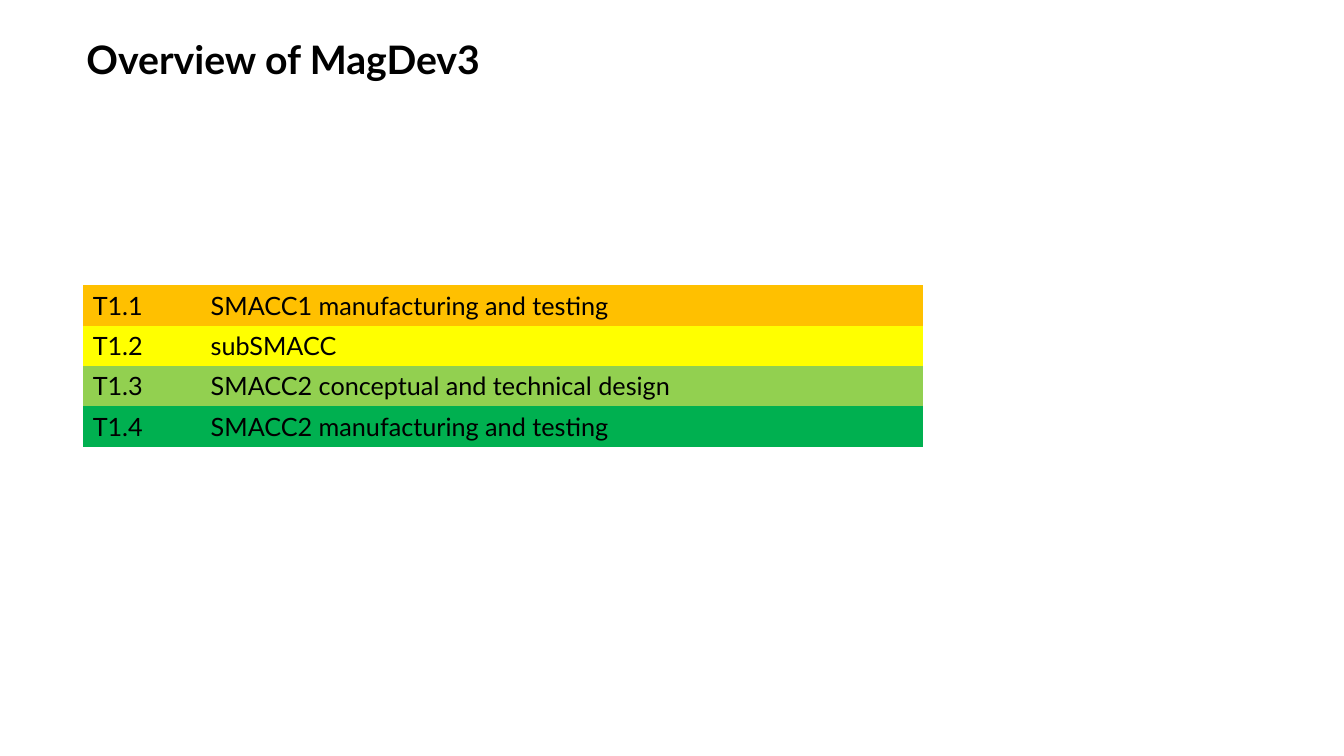
from dataclasses import dataclass

from pptx import Presentation
from pptx.dml.color import RGBColor
from pptx.enum.text import MSO_ANCHOR
from pptx.oxml.ns import qn
from pptx.slide import Slide
from pptx.text.text import TextFrame
from pptx.util import Inches, Pt

NO_STYLE_NO_GRID = "{2D5ABB26-0587-4C30-8999-92F81FD0307C}"
TITLE_FORMAT = {"name": "Lato", "size": Pt(28), "bold": True}
TASK_FORMAT = {"name": "Lato", "size": Pt(18), "bold": False}
COLUMN_WIDTHS = (1.17, 7.16)
ROW_HEIGHT = 0.4


@dataclass(frozen=True)
class Task:
    number: str
    subject: str
    fill: str


TASKS = [
    Task("T1.1", "SMACC1 manufacturing and testing", "FFC000"),
    Task("T1.2", "subSMACC", "FFFF00"),
    Task("T1.3", "SMACC2 conceptual and technical design", "92D050"),
    Task("T1.4", "SMACC2 manufacturing and testing", "00B050"),
]


def color(value: str) -> RGBColor:
    return RGBColor.from_string(value)


def write(frame: TextFrame, text: str, font_format: dict) -> None:
    run = frame.paragraphs[0].add_run()
    run.text = text
    for attribute, value in font_format.items():
        setattr(run.font, attribute, value)
    run.font.color.rgb = color("000000")


def add_title(slide: Slide, text: str) -> None:
    title = slide.shapes.add_textbox(Inches(0.76), Inches(0.3), Inches(9.8), Inches(0.89))
    title.text_frame.word_wrap = True
    write(title.text_frame, text, TITLE_FORMAT)


def add_task_table(slide: Slide, tasks: list[Task]) -> None:
    frame = slide.shapes.add_table(
        len(tasks), len(COLUMN_WIDTHS), Inches(0.82), Inches(2.83),
        Inches(sum(COLUMN_WIDTHS)), Inches(ROW_HEIGHT * len(tasks)))
    task_table = frame.table
    task_table.first_row = task_table.horz_banding = False
    # Plain table style without grid lines
    next(frame.element.iter(qn("a:tableStyleId"))).text = NO_STYLE_NO_GRID

    for column, width in zip(task_table.columns, COLUMN_WIDTHS):
        column.width = Inches(width)
    for row, task in zip(task_table.rows, tasks):
        row.height = Inches(ROW_HEIGHT)
        for cell, text in zip(row.cells, (task.number, task.subject)):
            cell.fill.solid()
            cell.fill.fore_color.rgb = color(task.fill)
            cell.vertical_anchor = MSO_ANCHOR.MIDDLE
            write(cell.text_frame, text, TASK_FORMAT)


def main() -> None:
    presentation = Presentation()
    presentation.slide_width = Inches(13.33)
    presentation.slide_height = Inches(7.5)
    slide = presentation.slides.add_slide(presentation.slide_layouts[6])

    # Heading
    add_title(slide, "Overview of MagDev3")

    # Tasks, one coloured row each
    add_task_table(slide, TASKS)

    presentation.save("out.pptx")


if __name__ == "__main__":
    main()
